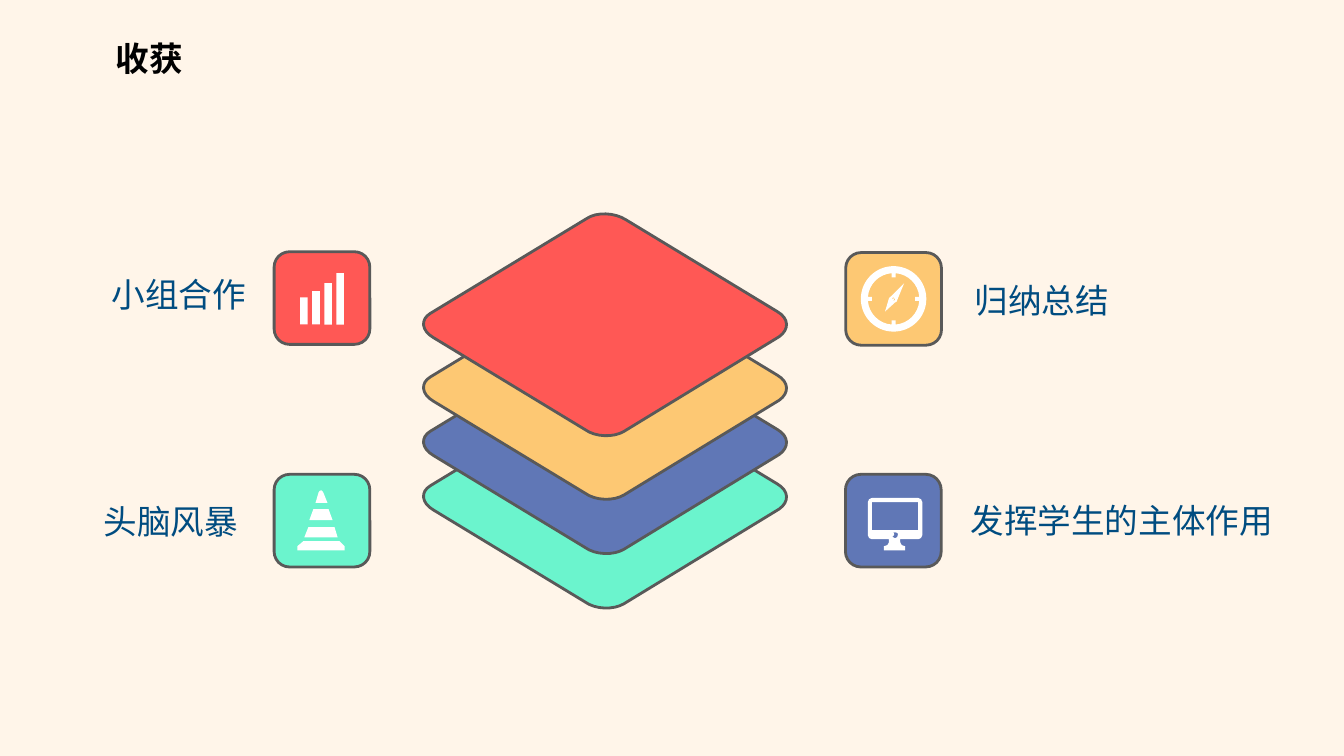
from math import cos, sin, radians
from lxml.etree import SubElement
from pptx import Presentation
from pptx.dml.color import RGBColor as Rgb
from pptx.enum.shapes import MSO_SHAPE as Kind
from pptx.enum.text import MSO_ANCHOR as Anchor, MSO_AUTO_SIZE as Fit, PP_ALIGN as Align
from pptx.oxml.ns import qn
from pptx.util import Pt

HUES = {
    "cream": "FFF5E9", "red": "FF5855", "gold": "FDC873", "blue": "6077B6",
    "mint": "6BF4CD", "edge": "595959", "white": "FFFFFF", "navy": "004C80",
    "black": "000000",
}
HUES = {name: Rgb.from_string(code) for name, code in HUES.items()}


def write(box, text, font="Noto Sans CJK SC", hue="navy", bold=False, align=Align.LEFT):
    frame = box.text_frame
    frame.word_wrap = False
    frame.auto_size = Fit.SHAPE_TO_FIT_TEXT
    frame.vertical_anchor = Anchor.TOP
    line = frame.paragraphs[0]
    line.alignment = align
    run = line.add_run()
    run.text = text
    run.font.size = Pt(24)
    run.font.bold = bold
    run.font.color.rgb = HUES[hue]
    run.font.name = font
    SubElement(run.font._element, qn("a:ea"), typeface=font)


def draw(host, hue, box=None, kind=Kind.RECTANGLE, loops=(), drop=0, edge=False):
    if box:
        shape = host.add_shape(kind, *map(Pt, box))
    else:
        pen = None
        for loop in loops:
            dots = [(Pt(step[i]), Pt(step[i + 1] + drop))
                    for step in loop for i in range(0, len(step), 2)]
            if pen is None:
                pen = host.build_freeform(*dots[0], scale=1.0)
            else:
                pen.move_to(*dots[0])
            pen.add_line_segments(dots[1:], close=True)
        shape = pen.convert_to_shape()
        legs = iter(list(shape._element.iter(qn("a:lnTo"))))
        for step in (step for loop in loops for step in loop[1:]):
            leg = next(legs)
            if len(step) == 6:
                leg.tag = qn("a:cubicBezTo")
                for _ in range(2):
                    more = next(legs)
                    leg.append(more[0])
                    more.getparent().remove(more)
    shape.shadow.inherit = False
    shape.fill.solid()
    shape.fill.fore_color.rgb = HUES[hue]
    if edge:
        shape.line.color.rgb = HUES["edge"]
        shape.line.width = Pt(2)
    else:
        shape.line.fill.background()


deck = Presentation()
deck.slide_width, deck.slide_height = Pt(960), Pt(540)
slide = deck.slides.add_slide(deck.slide_layouts[5])
slide.background.fill.solid()
slide.background.fill.fore_color.rgb = HUES["cream"]
items = slide.shapes

title = items.title
title.left, title.top, title.width, title.height = map(Pt, (75.6, 23.8, 63.4, 36))
write(title, "收获", font="Calibri", hue="black", bold=True, align=Align.JUSTIFY)

sheet = [
    (307.4, 72.7), (419, 5), (426.2, 0, 439.2, 0.7, 447.1, 5.8),
    (555.1, 71.3), (563.8, 76.3, 563.8, 84.2, 556.6, 89.3),
    (445.7, 157), (438.5, 161.3, 425.5, 161.3, 417.6, 155.5),
    (309.6, 90), (301, 85, 300.2, 77, 307.4, 72.7),
]
for hue, top in (("mint", 274.3), ("blue", 235.4), ("gold", 196.6), ("red", 151.2)):
    draw(items, hue, loops=[sheet], drop=top, edge=True)

tiles = [
    ("red", 195.8, 179.8, "小组合作", 72.7, 192.2, 111.6),
    ("gold", 604.1, 180.4, "归纳总结", 689, 196.6, 111.6),
    ("mint", 195.8, 338.8, "头脑风暴", 67, 354.2, 111.6),
    ("blue", 603.9, 338.8, "发挥学生的主体作用", 686.2, 353.5, 232.6),
]
for hue, left, top, text, x, y, wide in tiles:
    draw(items, hue, box=(left, top, 68.4, 66.2), kind=Kind.ROUNDED_RECTANGLE, edge=True)
    write(items.add_textbox(Pt(x), Pt(y), Pt(wide), Pt(36)), text)

chart = items.add_group_shape().shapes
for i, tall in enumerate((19.4, 23.8, 29.5, 36.7)):
    draw(chart, "white", box=(214.4 + 8.64 * i, 231.8 - tall, 5.4, tall))

rim, notch = [[(23.4, 0)]], [[(18.4, -4.5)]]
for turn in range(0, 360, 90):
    rim.append([(26.73, turn + 28.9), (26.73, turn + 61.1), (23.4, turn + 90)])
    notch += [[(15.5, turn - 5.3)], [(15.5, turn + 5.3)], [(18.4, turn + 4.5)],
              [(20.5, turn + 30.7), (20.5, turn + 59.3), (18.4, turn + 85.5)]]
dial = [[[v for r, a in step
          for v in (638.3 + r * cos(radians(a)), 213.5 + r * sin(radians(a)))]
         for step in ring] for ring in (rim, notch)]
needle = [
    [(635, 213.1), (632.2, 222.5), (639.4, 216), (640.8, 216, 640.8, 214.6, 640.8, 214.6),
     (645.8, 202.3), (636.5, 211.7), (635.8, 212.4, 635, 212.4, 635, 213.1)],
    [(638.2, 212.4), (638.9, 212.4, 639.4, 213.1, 639.4, 213.8),
     (639.4, 214.6, 638.9, 214.6, 638.2, 214.6),
     (637.2, 214.6, 637.2, 214.6, 637.2, 213.8),
     (637.2, 213.1, 637.2, 212.4, 638.2, 212.4)],
]
compass = items.add_group_shape().shapes
for loops in (dial, needle):
    draw(compass, "white", loops=loops)
draw(compass, "white", box=(637.2, 213.1, 1.4, 1.4), kind=Kind.OVAL)

screen = [
    [(655.9, 355.7), (622.8, 355.7), (621.4, 355.7, 619.9, 357.1, 619.9, 358.6),
     (619.9, 382.3), (619.9, 383.8, 621.4, 385.2, 622.8, 385.2),
     (635, 385.2), (635, 385.2, 635.8, 390.2, 631.4, 390.2),
     (631.4, 393.1), (646.6, 393.1), (646.6, 390.2),
     (642.2, 390.2, 643, 385.2, 643, 385.2),
     (655.9, 385.2), (657.4, 385.2, 658.8, 383.8, 658.8, 382.3),
     (658.8, 358.6), (658.8, 357.1, 657.4, 355.7, 655.9, 355.7)],
    [(637.2, 381.6), (637.2, 380.9, 637.9, 380.2, 639.4, 380.2),
     (640.8, 380.2, 641.5, 380.9, 641.5, 381.6),
     (641.5, 383, 640.8, 384.5, 639.4, 384.5),
     (637.9, 384.5, 637.2, 383, 637.2, 381.6)],
    [(655.9, 378.7), (622.8, 378.7), (622.8, 358.6), (655.9, 358.6)],
]
desk = items.add_group_shape().shapes
draw(desk, "white", loops=screen)
draw(desk, "white", box=(635.8, 380.2, 2.9, 2.9), kind=Kind.OVAL)

cone = [
    [(246.2, 393.1), (212.4, 393.1), (212.4, 390.2), (216.7, 386.6), (242.6, 386.6), (246.2, 390.2)],
    [(217.4, 383.8), (220.3, 376.6), (239, 376.6), (241.2, 383.8)],
    [(221, 371.5), (223.9, 363.6), (234.7, 363.6), (237.6, 371.5)],
    [(227.5, 352.1), (227.5, 352.1, 229, 347.8, 231.1, 352.1), (234, 359.3), (225.4, 359.3)],
]
draw(items, "white", loops=cone)

deck.save("out.pptx")
